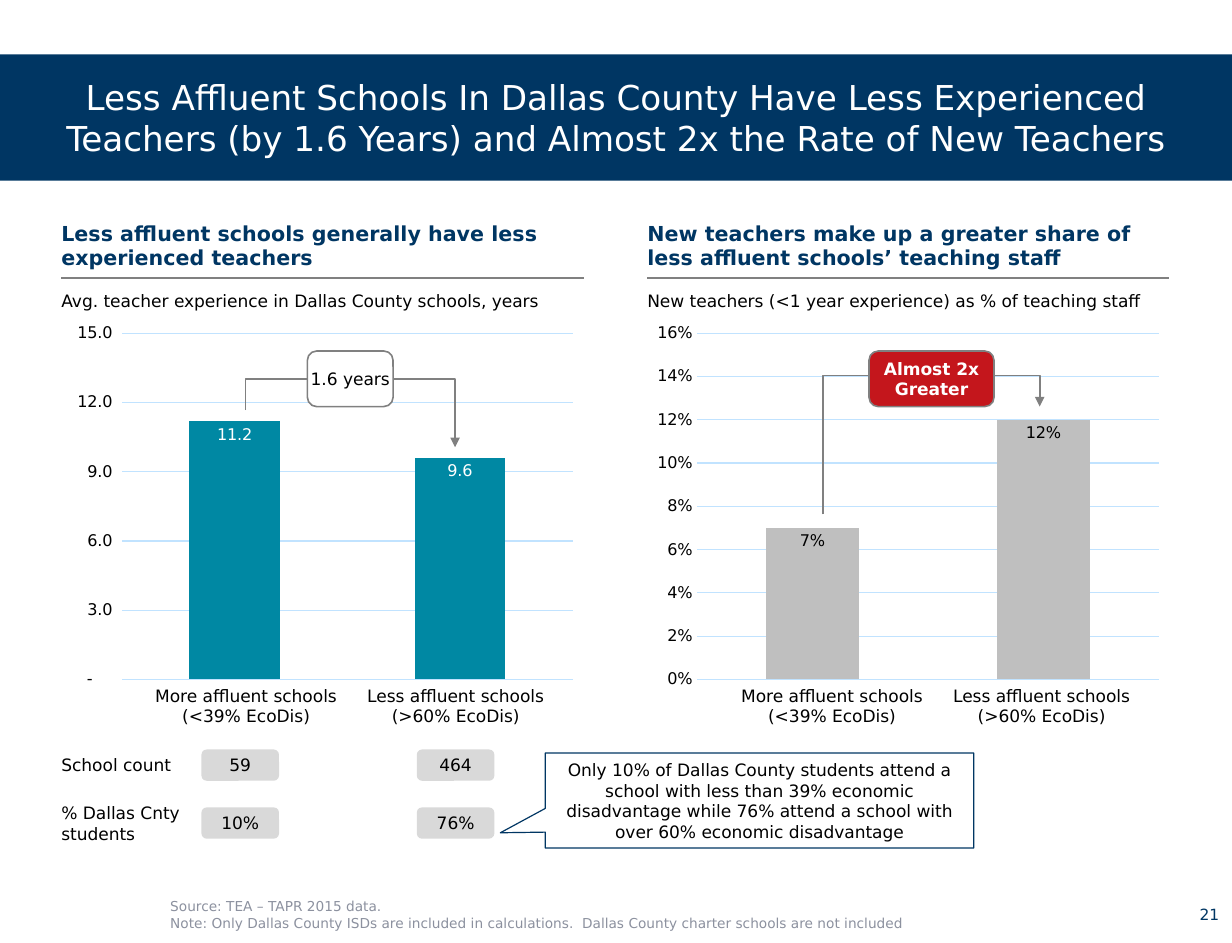
"""Build the slide comparing teacher experience in more and less affluent schools."""
from dataclasses import dataclass

from lxml.etree import SubElement
from pptx import Presentation
from pptx.chart.data import CategoryChartData
from pptx.dml.color import RGBColor
from pptx.enum.chart import XL_CHART_TYPE, XL_LABEL_POSITION, XL_TICK_MARK
from pptx.enum.shapes import MSO_CONNECTOR, MSO_SHAPE
from pptx.enum.text import MSO_ANCHOR, PP_ALIGN
from pptx.oxml import parse_xml
from pptx.oxml.ns import nsdecls, qn
from pptx.util import Inches, Pt


@dataclass(frozen=True)
class Theme:
    """Colours, type sizes and font of the slide."""
    font: str = "DejaVu Sans"
    navy: str = "003663"
    teal: str = "0088A3"
    red: str = "C4161C"
    white: str = "FFFFFF"
    black: str = "000000"
    rule: str = "808080"
    silver: str = "BFBFBF"
    pill: str = "D9D9D9"
    grid: str = "C1E3FF"
    muted: str = "8C919F"
    title: float = 21.3
    heading: float = 12.8
    body: float = 10.6
    chart: float = 10
    number: float = 9.6
    note: float = 8.5


THEME = Theme()
WIDTH, HEIGHT = 10.64, 8.14
MARGIN, COLUMN, GUTTER = 0.53, 4.51, 0.55
CHART_TOP, CHART_HEIGHT = 2.73, 3.27
BADGE_TOP, BADGE_HEIGHT = 3.03, 0.48
LABEL_LEFT, LABEL_STEP, LABEL_WIDTH = 0.8, 1.81, 1.59
PILL_LEFT, PILL_STEP, PILL_WIDTH = 1.74, 1.86, 0.67
ROW_TOP, ROW_STEP, ROW_HEIGHT = 6.47, 0.5, 0.27

TITLE = ("Less Affluent Schools In Dallas County Have Less Experienced Teachers "
         "(by 1.6 Years) and Almost 2x the Rate of New Teachers")
GROUPS = ["More affluent schools\v(<39% EcoDis)", "Less affluent schools\v(>60% EcoDis)"]
PANELS = [
    dict(heading="Less affluent schools generally have less experienced teachers",
         subtitle="Avg. teacher experience in Dallas County schools, years",
         values=(11.2, 9.6), maximum=15, step=3,
         number_format='_(* #,##0.0_);_(* \\(#,##0.0\\);_(* "-"??_)',
         bar=THEME.teal, label=THEME.white, plot=(0.116, 0.863),
         arrow=[(2.12, 3.54), (2.12, 3.27), (3.93, 3.27), (3.93, 3.86)],
         badge="1.6 years", badge_width=0.74, badge_fill=THEME.white,
         badge_color=THEME.black, bold=False),
    dict(heading="New teachers make up a greater share of less affluent schools’ teaching staff",
         subtitle="New teachers (<1 year experience) as % of teaching staff",
         values=(0.07, 0.12), maximum=0.16, step=0.02, number_format="0%",
         bar=THEME.silver, label=THEME.black, plot=(0.095, 0.885),
         arrow=[(7.11, 4.44), (7.11, 3.24), (8.98, 3.24), (8.98, 3.51)],
         badge="Almost 2x Greater", badge_width=1.08, badge_fill=THEME.red,
         badge_color=THEME.white, bold=True),
]
ROWS = [("School count", ("59", "464")), ("% Dallas Cnty students", ("10%", "76%"))]
CALLOUT = ("Only 10% of Dallas County students attend a school with less than 39% economic "
           "disadvantage while 76% attend a school with over 60% economic disadvantage")
NOTES = ("Source: TEA – TAPR 2015 data.\nNote: Only Dallas County ISDs are included in "
         "calculations.  Dallas County charter schools are not included")


def style_font(font, size, color, bold=False):
    font.name, font.size, font.bold = THEME.font, Pt(size), bold
    font.color.rgb = RGBColor.from_string(color)


def write(shape, text, size=THEME.body, color=THEME.black, bold=False,
          align=PP_ALIGN.LEFT, anchor=MSO_ANCHOR.MIDDLE, insets=(0, 0, 0, 0)):
    frame = shape.text_frame
    frame.word_wrap, frame.vertical_anchor = True, anchor
    (frame.margin_left, frame.margin_top,
     frame.margin_right, frame.margin_bottom) = map(Inches, insets)
    frame.text = text
    for paragraph in frame.paragraphs:
        paragraph.alignment = align
        style_font(paragraph.font, size, color, bold)


def add_text(slide, box, text, **style):
    write(slide.shapes.add_textbox(*map(Inches, box)), text, **style)


def add_block(slide, kind, box, fill, line=None, weight=1):
    shape = slide.shapes.add_shape(kind, *map(Inches, box))
    shape.shadow.inherit = False
    shape.fill.solid()
    shape.fill.fore_color.rgb = RGBColor.from_string(fill)
    if line:
        shape.line.color.rgb = RGBColor.from_string(line)
        shape.line.width = Pt(weight)
    else:
        shape.line.fill.background()
    return shape


def add_rule(slide, left, top):
    rule = slide.shapes.add_connector(MSO_CONNECTOR.STRAIGHT, Inches(left), Inches(top),
                                      Inches(left + COLUMN), Inches(top))
    rule.line.color.rgb = RGBColor.from_string(THEME.rule)
    rule.line.width = Pt(1)
    SubElement(rule._element.spPr, qn("a:effectLst"))


def add_arrow(slide, points):
    start, *others = [(Inches(x), Inches(y)) for x, y in points]
    builder = slide.shapes.build_freeform(*start)
    builder.add_line_segments(others, close=False)
    arrow = builder.convert_to_shape()
    arrow.shadow.inherit = False
    arrow.fill.background()
    arrow.line.color.rgb = RGBColor.from_string(THEME.rule)
    arrow.line.width = Pt(1)
    SubElement(arrow.line._get_or_add_ln(), qn("a:tailEnd"), type="triangle")


def add_bars(slide, left, panel):
    data = CategoryChartData(number_format=panel["number_format"])
    data.categories = ["1", "2"]
    data.add_series("Series 1", panel["values"])
    box = map(Inches, (left, CHART_TOP, COLUMN, CHART_HEIGHT))
    chart = slide.shapes.add_chart(XL_CHART_TYPE.COLUMN_STACKED, *box, data).chart
    chart.has_legend = chart.has_title = False
    style_font(chart.font, THEME.chart, THEME.navy)
    chart.category_axis.visible = False

    axis = chart.value_axis
    axis.minimum_scale, axis.maximum_scale = 0, panel["maximum"]
    axis.major_unit = panel["step"]
    axis.major_tick_mark = XL_TICK_MARK.NONE
    axis.format.line.fill.background()
    axis.major_gridlines.format.line.color.rgb = RGBColor.from_string(THEME.grid)
    axis.major_gridlines.format.line.width = Pt(0.75)

    plot = chart.plots[0]
    plot.gap_width, plot.overlap, plot.vary_by_categories = 150, 100, False
    fill = plot.series[0].format.fill
    fill.solid()
    fill.fore_color.rgb = RGBColor.from_string(panel["bar"])
    plot.has_data_labels = True
    labels = plot.data_labels
    labels.show_value, labels.position = True, XL_LABEL_POSITION.INSIDE_END
    for item, color in ((axis.tick_labels, THEME.black), (labels, panel["label"])):
        style_font(item.font, THEME.chart, color)
        item.number_format, item.number_format_is_linked = panel["number_format"], False

    plot_area = chart._chartSpace.chart.plotArea
    for layout in plot_area.findall(qn("c:layout")):
        plot_area.remove(layout)
    offset, share = panel["plot"]
    settings = [("layoutTarget", "inner"), ("xMode", "edge"), ("yMode", "edge"),
                ("x", offset), ("y", 0.045), ("w", share), ("h", 0.914)]
    entries = "".join(f'<c:{name} val="{value}"/>' for name, value in settings)
    plot_area.insert(0, parse_xml(f'<c:layout {nsdecls("c")}><c:manualLayout>{entries}'
                                  '</c:manualLayout></c:layout>'))


def add_panel(slide, left, panel):
    add_text(slide, (left, 1.77, COLUMN, 0.61), panel["heading"], size=THEME.heading,
             color=THEME.navy, bold=True, anchor=MSO_ANCHOR.BOTTOM, insets=(0, 0.05, 0, 0.05))
    add_rule(slide, left, 2.4)
    add_bars(slide, left, panel)
    add_text(slide, (left, 2.4, COLUMN, 0.39), panel["subtitle"])
    add_arrow(slide, panel["arrow"])
    center = (panel["arrow"][0][0] + panel["arrow"][-1][0]) / 2
    width = panel["badge_width"]
    badge = add_block(slide, MSO_SHAPE.ROUNDED_RECTANGLE,
                      (center - width / 2, BADGE_TOP, width, BADGE_HEIGHT),
                      panel["badge_fill"], THEME.rule)
    write(badge, panel["badge"], color=panel["badge_color"], bold=panel["bold"],
          align=PP_ALIGN.CENTER)
    for index, group in enumerate(GROUPS):
        add_text(slide, (left + LABEL_LEFT + index * LABEL_STEP, 5.88, LABEL_WIDTH, 0.42),
                 group, align=PP_ALIGN.CENTER)


def main():
    presentation = Presentation()
    presentation.slide_width, presentation.slide_height = Inches(WIDTH), Inches(HEIGHT)
    slide = presentation.slides.add_slide(presentation.slide_layouts[6])

    banner = add_block(slide, MSO_SHAPE.RECTANGLE, (0, 0.47, WIDTH, 1.09), THEME.navy)
    write(banner, TITLE, size=THEME.title, color=THEME.white, align=PP_ALIGN.CENTER,
          insets=(0.05, 0.1, 0.05, 0.1))
    for index, panel in enumerate(PANELS):
        add_panel(slide, MARGIN + index * (COLUMN + GUTTER), panel)

    for row, (name, values) in enumerate(ROWS):
        top = ROW_TOP + row * ROW_STEP
        add_text(slide, (MARGIN, top, PILL_LEFT - MARGIN, ROW_HEIGHT), name)
        for column, value in enumerate(values):
            box = (PILL_LEFT + column * PILL_STEP, top, PILL_WIDTH, ROW_HEIGHT)
            pill = add_block(slide, MSO_SHAPE.ROUNDED_RECTANGLE, box, THEME.pill)
            write(pill, value, align=PP_ALIGN.CENTER)

    callout = add_block(slide, MSO_SHAPE.RECTANGULAR_CALLOUT, (4.71, 6.5, 3.7, 0.82),
                        THEME.white, THEME.navy, 0.75)
    callout.adjustments[0], callout.adjustments[1] = -0.605, 0.34
    write(callout, CALLOUT, align=PP_ALIGN.CENTER, insets=(0.05,) * 4)
    add_text(slide, (1.42, 7.68, 8.88, 0.43), NOTES, size=THEME.note, color=THEME.muted,
             insets=(0.05, 0, 0, 0))
    add_text(slide, (10.12, 7.68, 0.52, 0.43), "21", size=THEME.number, color=THEME.navy,
             align=PP_ALIGN.RIGHT, insets=(0.11, 0.05, 0.11, 0.05))
    presentation.save("out.pptx")


if __name__ == "__main__":
    main()
